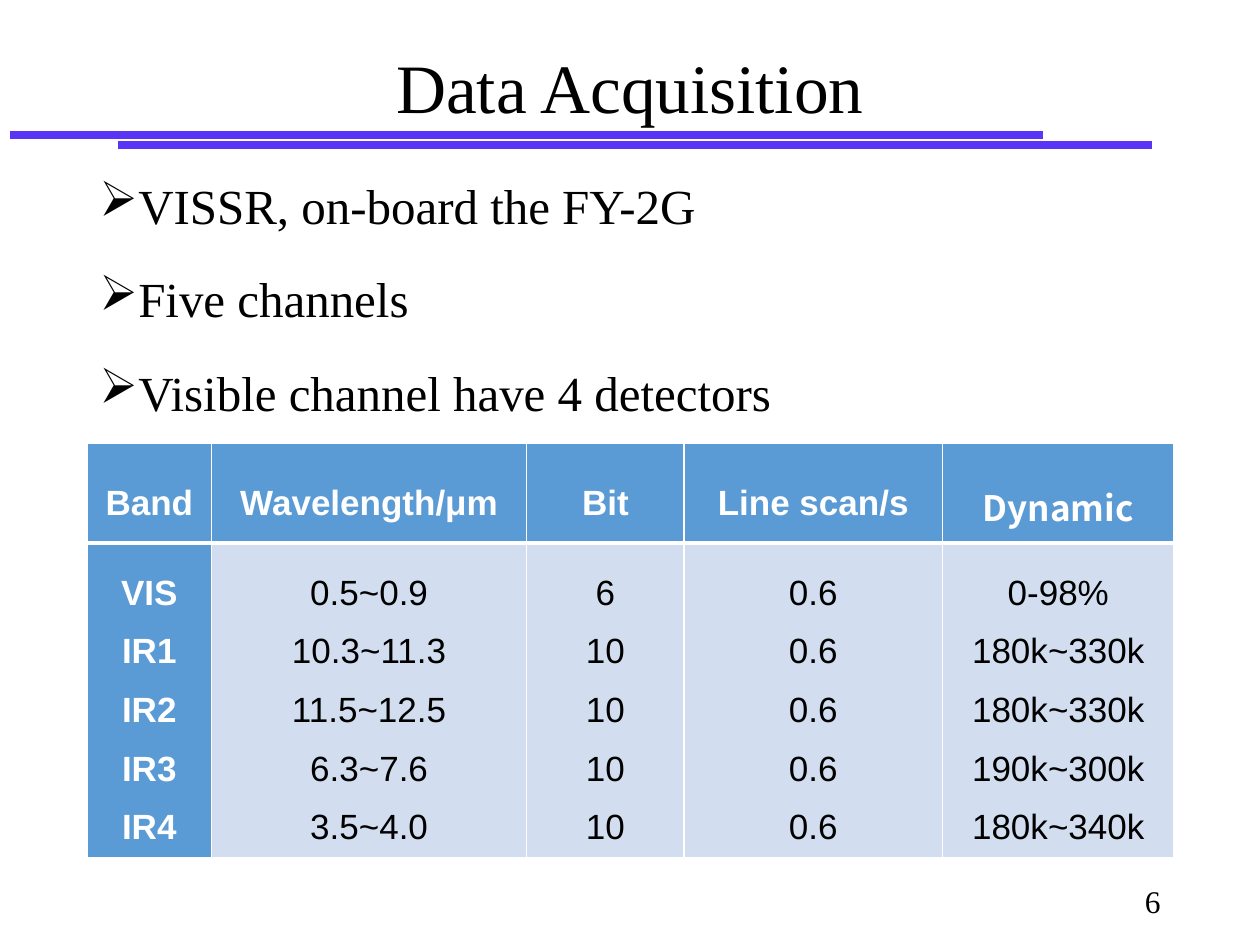
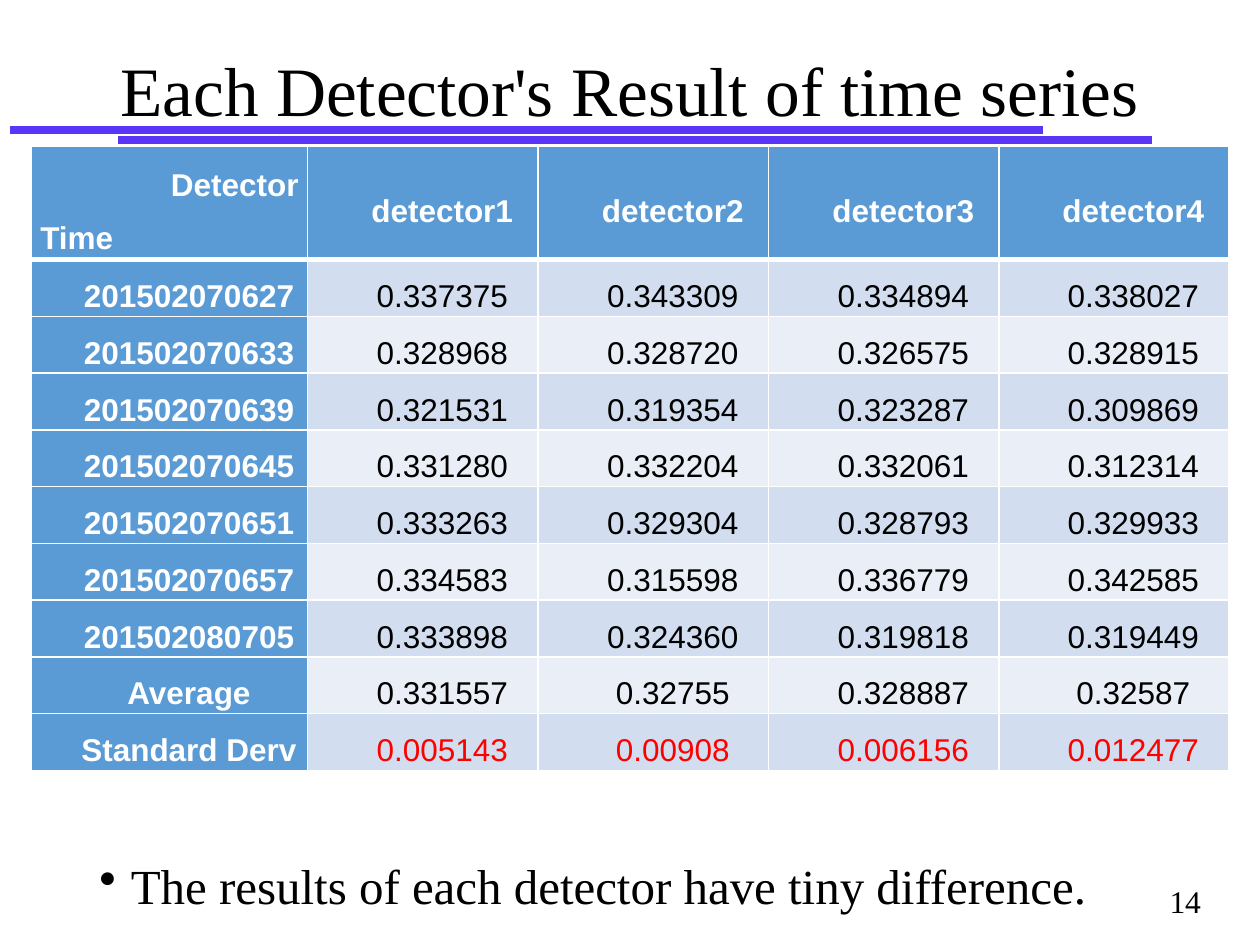
import pptx
import pptx.util
import pptx.oxml
import pptx.oxml.ns
import pptx.dml.color
import pptx.enum.shapes
import pptx.enum.text

Inches = pptx.util.Inches
Pt = pptx.util.Pt
Align = pptx.enum.text.PP_ALIGN
Anchor = pptx.enum.text.MSO_ANCHOR

COLORS = {
    "text": "000000",
    "rule": "5A35F5",
    "header": "5B9BD5",
    "band_dark": "D2DEEF",
    "band_light": "EAEFF7",
    "white": "FFFFFF",
    "highlight": "FF0000",
}
SERIF = "Times New Roman"
SANS = "Arial"
CJK_SANS = "Noto Sans CJK SC"
MARGIN = 0.69
CONTENT_WIDTH = 8.62
RULE_LENGTH = 8.2
FIRST_LINE_INDENT = 0.31

CHANNELS = [
    ["Band", "Wavelength/μm", "Bit", "Line scan/s", "Dynamic"],
    [
        "VIS\nIR1\nIR2\nIR3\nIR4",
        "0.5~0.9\n10.3~11.3\n11.5~12.5\n6.3~7.6\n3.5~4.0",
        "6\n10\n10\n10\n10",
        "0.6\n0.6\n0.6\n0.6\n0.6",
        "0-98%\n180k~330k\n180k~330k\n190k~300k\n180k~340k",
    ],
]
DETECTOR_RESULTS = [
    ["Detector\nTime", "detector1", "detector2", "detector3", "detector4"],
    ["201502070627", "0.337375", "0.343309", "0.334894", "0.338027"],
    ["201502070633", "0.328968", "0.328720", "0.326575", "0.328915"],
    ["201502070639", "0.321531", "0.319354", "0.323287", "0.309869"],
    ["201502070645", "0.331280", "0.332204", "0.332061", "0.312314"],
    ["201502070651", "0.333263", "0.329304", "0.328793", "0.329933"],
    ["201502070657", "0.334583", "0.315598", "0.336779", "0.342585"],
    ["201502080705", "0.333898", "0.324360", "0.319818", "0.319449"],
    ["Average", "0.331557", "0.32755", "0.328887", "0.32587"],
    ["Standard Derv", "0.005143", "0.00908", "0.006156", "0.012477"],
]


def rgb(color):
    return pptx.dml.color.RGBColor.from_string(COLORS[color])


def add_xml(parent, content):
    tag, rest = content.split(" ", 1)
    namespace = pptx.oxml.ns.nsdecls("a")
    parent.append(pptx.oxml.parse_xml(f"<a:{tag} {namespace} {rest}"))


def set_font(paragraph, name, size, color="text", bold=False):
    paragraph.font.name = name
    paragraph.font.size = Pt(size)
    paragraph.font.color.rgb = rgb(color)
    paragraph.font.bold = bold


def place(shape, left, top, width, height):
    shape.left, shape.top = Inches(left), Inches(top)
    shape.width, shape.height = Inches(width), Inches(height)


def add_title_slide(presentation, title, top, height):
    slide = presentation.slides.add_slide(presentation.slide_layouts[5])
    shape = slide.shapes.title
    place(shape, MARGIN, top, CONTENT_WIDTH, height)
    frame = shape.text_frame
    frame.text = title
    frame.word_wrap = True
    frame.auto_size = pptx.enum.text.MSO_AUTO_SIZE.NONE
    frame.vertical_anchor = Anchor.MIDDLE
    paragraph = frame.paragraphs[0]
    paragraph.alignment = Align.CENTER
    paragraph.line_spacing = 0.9
    set_font(paragraph, SERIF, 39.6)
    return slide


def add_text(slide, lines, left, top, width, height):
    shape = slide.shapes.add_textbox(
        Inches(left), Inches(top), Inches(width), Inches(height))
    shape.text_frame.text = "\n".join(lines)
    shape.text_frame.word_wrap = True
    return shape.text_frame.paragraphs


def add_bullets(slide, lines, top, height, bullet, line_spacing):
    paragraphs = add_text(slide, lines, MARGIN, top, CONTENT_WIDTH, height)
    for paragraph in paragraphs:
        set_font(paragraph, SERIF, 28)
        paragraph.line_spacing = line_spacing
        paragraph.space_before = Pt(10)
        properties = paragraph._p.get_or_add_pPr()
        properties.set("marL", str(Inches(0.25)))
        properties.set("indent", str(-Inches(0.25)))
        bullet_xml = pptx.oxml.parse_xml(
            f'<a:buChar {pptx.oxml.ns.nsdecls("a")} char="{bullet}"/>')
        properties.insert_element_before(
            bullet_xml, "a:tabLst", "a:defRPr", "a:extLst")


def add_page_number(slide, number, left, width):
    paragraph = add_text(slide, [number], left, 6.95, width, 0.4)[0]
    paragraph.alignment = Align.RIGHT
    set_font(paragraph, SERIF, 18)


def add_double_rule(slide, top):
    for left, y in ((0.08, top), (0.94, top + 0.08)):
        line = slide.shapes.add_connector(
            pptx.enum.shapes.MSO_CONNECTOR.STRAIGHT,
            Inches(left), Inches(y), Inches(left + RULE_LENGTH), Inches(y))
        line.line.color.rgb = rgb("rule")
        line.line.width = Pt(4.5)
        add_xml(line._element.spPr, "effectLst />")


def set_borders(cell, row):
    widths = {"L": 1, "R": 1, "T": 3 if row == 1 else 1, "B": 3 if row == 0 else 1}
    properties = cell._tc.get_or_add_tcPr()
    for side, width in widths.items():
        add_xml(properties,
                f'ln{side} w="{Pt(width)}"><a:solidFill>'
                f'<a:srgbClr val="{COLORS["white"]}"/></a:solidFill></a:ln{side}>')


def format_cell(cell, text, row, column, size, indent, color):
    is_header = row == 0 or column == 0
    band = "band_dark" if row % 2 else "band_light"
    set_borders(cell, row)
    cell.fill.solid()
    cell.fill.fore_color.rgb = rgb("header" if is_header else band)
    cell.vertical_anchor = Anchor.MIDDLE
    cell.margin_left = cell.margin_right = Inches(0.07)
    cell.margin_top = cell.margin_bottom = 0
    cell.text = text
    for paragraph in cell.text_frame.paragraphs:
        paragraph.alignment = Align.CENTER
        paragraph.line_spacing = 1.5
        set_font(paragraph, SANS, size, "white" if is_header else color, is_header)
        if indent:
            paragraph._p.get_or_add_pPr().set("indent", str(Inches(indent)))


def add_table(slide, rows, left, top, widths, heights, size, indent=0, last_color="text"):
    table = slide.shapes.add_table(
        len(rows), len(widths), Inches(left), Inches(top),
        Inches(sum(widths)), Inches(sum(heights))).table
    for column, width in zip(table.columns, widths):
        column.width = Inches(width)
    for table_row, height in zip(table.rows, heights):
        table_row.height = Inches(height)
    for row, texts in enumerate(rows):
        color = last_color if row == len(rows) - 1 else "text"
        for column, text in enumerate(texts):
            format_cell(table.cell(row, column), text, row, column, size, indent, color)
    return table


def build_acquisition(presentation):
    slide = add_title_slide(presentation, "Data Acquisition", 0.39, 0.67)
    add_bullets(
        slide,
        ["VISSR, on-board the FY-2G", "Five channels", "Visible channel have 4 detectors"],
        1.2, 5.32, "➢", 1.3)
    add_page_number(slide, "6", 8.7, 0.61)
    table = add_table(slide, CHANNELS, MARGIN, 3.52,
                      [0.99, 2.5, 1.25, 2.05, 1.84], [0.79, 2.32], 20)
    table.cell(0, 4).text_frame.paragraphs[0].font.name = CJK_SANS
    add_double_rule(slide, 1.07)


def build_detector_results(presentation):
    slide = add_title_slide(
        presentation, "Each Detector's Result of time series", 0.4, 0.69)
    add_bullets(slide, ["The results of each detector have tiny difference."],
                6.79, 0.58, "•", 0.9)
    add_page_number(slide, "14", 8.98, 0.65)
    table = add_table(slide, DETECTOR_RESULTS, 0.25, 1.16,
                      [2.19, 1.83, 1.83, 1.83, 1.82], [0.9] + [0.45] * 9,
                      18, FIRST_LINE_INDENT, "highlight")
    detector, time = table.cell(0, 0).text_frame.paragraphs
    detector.alignment = Align.RIGHT
    time.alignment = Align.JUSTIFY
    time._p.get_or_add_pPr().set("indent", "0")
    add_double_rule(slide, 1.03)


def main():
    presentation = pptx.Presentation()
    presentation.slide_width = Inches(10)
    presentation.slide_height = Inches(7.5)
    build_acquisition(presentation)
    build_detector_results(presentation)
    presentation.save("out.pptx")


if __name__ == "__main__":
    main()
